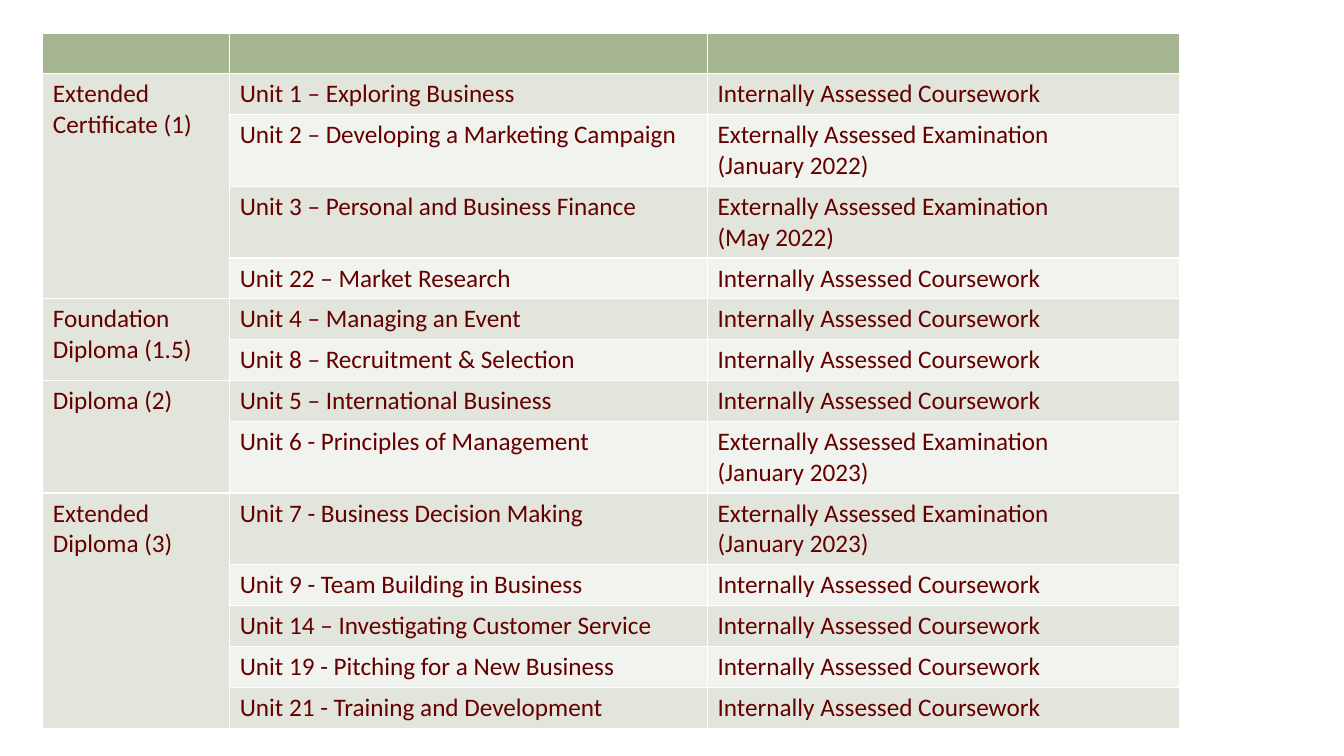
"""Build a slide with a table of course units and their assessment."""
import pptx
import pptx.dml.color
import pptx.util
from pptx.util import Cm


def rgb(value):
    return pptx.dml.color.RGBColor.from_string(value)


coursework = "Internally Assessed Coursework"
exam = "Externally Assessed Examination\n"
awards = [
    ("Extended Certificate (1)", [
        ("Unit 1 – Exploring Business", coursework),
        ("Unit 2 – Developing a Marketing Campaign", exam + "(January 2022)"),
        ("Unit 3 – Personal and Business Finance", exam + "(May 2022)"),
        ("Unit 22 – Market Research", coursework),
    ]),
    ("Foundation Diploma (1.5)", [
        ("Unit 4 – Managing an Event", coursework),
        ("Unit 8 – Recruitment & Selection", coursework),
    ]),
    ("Diploma (2)", [
        ("Unit 5 – International Business", coursework),
        ("Unit 6 - Principles of Management", exam + "(January 2023)"),
    ]),
    ("Extended Diploma (3)", [
        ("Unit 7 - Business Decision Making", exam + "(January 2023)"),
        ("Unit 9 - Team Building in Business", coursework),
        ("Unit 14 – Investigating Customer Service", coursework),
        ("Unit 19 - Pitching for a New Business", coursework),
        ("Unit 21 - Training and Development", coursework),
    ]),
]
header_fill = "A5B592"
band_fills = ["F0F3EE", "E1E5DC"]
line_height = Cm(1.03)
two_line_height = Cm(1.8)
widths = [Cm(4.71), Cm(12.04), Cm(11.9)]

prs = pptx.Presentation()
prs.slide_width = Cm(33.87)
prs.slide_height = Cm(19.05)
s = prs.slides.add_slide(prs.slide_layouts[6])

row_count = 1 + sum(len(units) for award, units in awards)
table = s.shapes.add_table(row_count, 3, Cm(1.08), Cm(0.83),
                           sum(widths), line_height * row_count).table
for column, width in zip(table.columns, widths):
    column.width = width

row = 1
for award, units in awards:
    table.cell(row, 0).text = award
    table.cell(row, 0).merge(table.cell(row + len(units) - 1, 0))
    for unit, assessment in units:
        table.cell(row, 1).text = unit
        table.cell(row, 2).text = assessment
        row += 1

for i, table_row in enumerate(table.rows):
    two_lines = "\n" in table.cell(i, 2).text
    table_row.height = two_line_height if two_lines else line_height
    for j, cell in enumerate(table_row.cells):
        band = band_fills[1] if j == 0 else band_fills[i % 2]
        cell.fill.solid()
        cell.fill.fore_color.rgb = rgb(band if i else header_fill)
        for p in cell.text_frame.paragraphs:
            p.font.name = "Calibri"
            p.font.size = pptx.util.Pt(18)
            p.font.color.rgb = rgb("660000")

prs.save("out.pptx")
